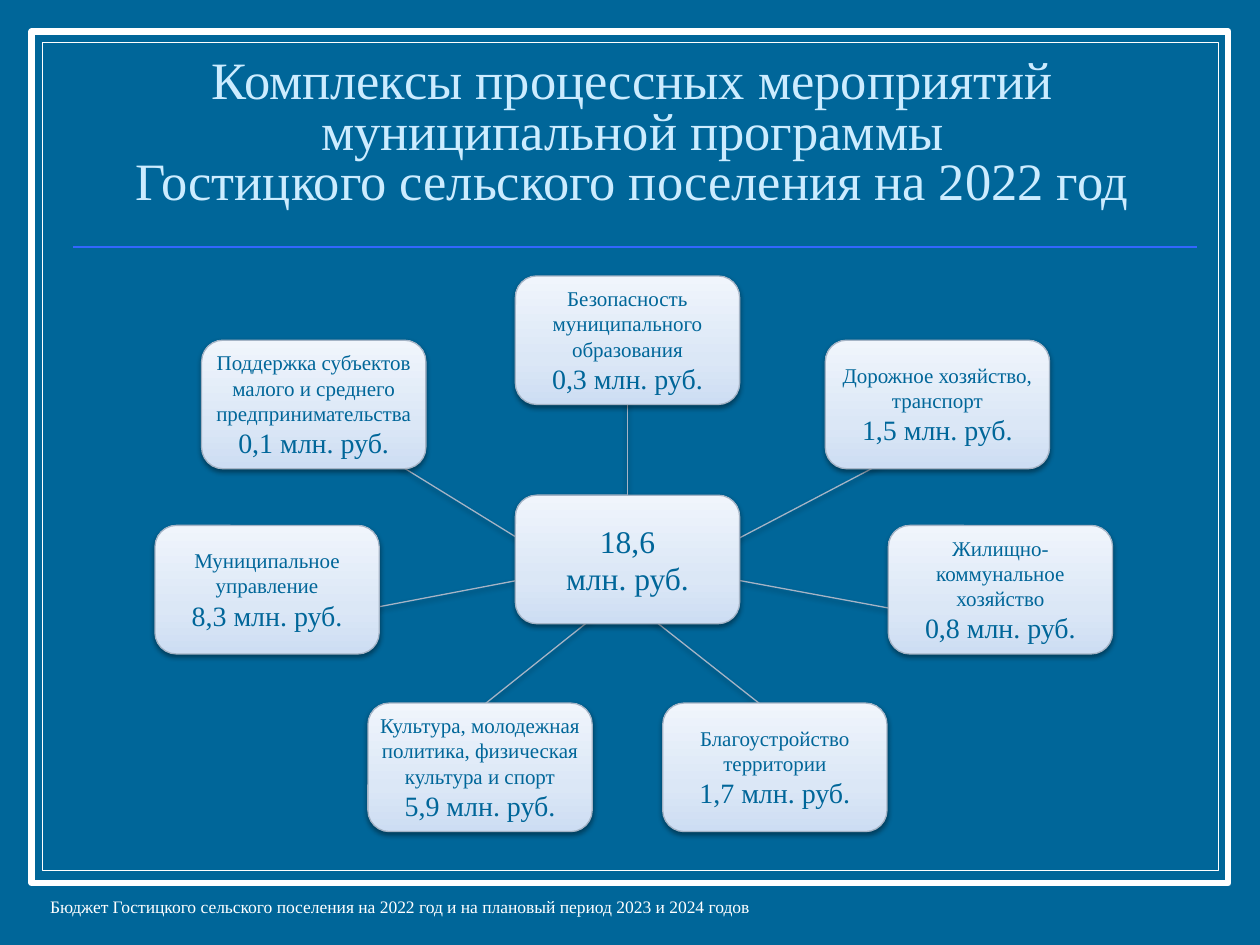
import pptx
import pptx.util
import pptx.dml.color
import pptx.enum.shapes
import pptx.enum.text
import pptx.oxml
import pptx.oxml.ns
from pptx.util import Inches

FONT = "Times New Roman"
BLUE, WHITE, EDGE = "006699", "FFFFFF", "A5B4C6"
BOX_WIDTH, BOX_HEIGHT = 1.78, 1.02
GRADIENT = [(0, "CDDDF3"), (35, "DBE7F6"), (100, "F0F5FC")]
CENTER = pptx.enum.text.PP_ALIGN.CENTER
ANCHOR = pptx.enum.text.MSO_ANCHOR
SHAPE = pptx.enum.shapes.MSO_SHAPE

# Box corner, spoke start, spoke end, paragraphs above the amount, amount
PROGRAMS = [
    ((1.6, 2.7), (4.14, 4.29), (3.07, 3.63),
     ["Поддержка субъектов малого и среднего предпринимательства"], "0,1"),
    ((1.23, 4.17), (4.14, 4.6), (2.46, 4.92),
     ["Муниципальное управление"], "8,3"),
    ((2.92, 5.58), (4.76, 4.86), (3.72, 5.69),
     ["Культура, молодежная\nполитика, физическая\nкультура и спорт"], "5,9"),
    ((5.26, 5.58), (5.11, 4.86), (6.15, 5.68),
     ["Благоустройство\nтерритории"], "1,7"),
    ((7.05, 4.17), (5.83, 4.6), (7.51, 4.91),
     ["Жилищно-\nкоммунальное", "хозяйство"], "0,8"),
    ((6.55, 2.7), (5.83, 4.29), (7.05, 3.65),
     ["Дорожное хозяйство,\nтранспорт"], "1,5"),
    ((4.09, 2.19), (4.98, 4.03), (4.98, 2.88),
     ["Безопасность\nмуниципального\nобразования"], "0,3"),
]


def rgb(value):
    return pptx.dml.color.RGBColor.from_string(value)


def xml(text):
    return pptx.oxml.parse_xml(text.replace(">", f" {pptx.oxml.ns.nsdecls('a')}>", 1))


def set_line(item, color, width):
    item.line.color.rgb = rgb(color)
    item.line.width = pptx.util.Pt(width)


def add_effects(item, shadow=True):
    content = (
        '<a:outerShdw blurRad="39370" dist="20320" dir="5400000" rotWithShape="0">'
        '<a:srgbClr val="000000"><a:alpha val="38000"/></a:srgbClr></a:outerShdw>'
    ) if shadow else ""
    item._element.spPr.append(xml(f"<a:effectLst>{content}</a:effectLst>"))


def add_text(frame, rows, color, align=None, spacing=None):
    """Write rows of (text, size), one paragraph each."""
    frame.word_wrap = True
    for index, (text, size) in enumerate(rows):
        para = frame.add_paragraph() if index else frame.paragraphs[0]
        para.text = text
        para.alignment = align
        para.line_spacing = spacing
        para.font.name = FONT
        para.font.size = pptx.util.Pt(size)
        para.font.color.rgb = rgb(color)


def add_label(page, area, text, size, color, **style):
    box = page.shapes.add_textbox(*map(Inches, area))
    box.text_frame.vertical_anchor = ANCHOR.BOTTOM
    add_text(box.text_frame, [(text, size)], color, **style)


def add_frame(page, area, width):
    frame = page.shapes.add_shape(SHAPE.RECTANGLE, *map(Inches, area))
    frame.shadow.inherit = False
    frame.fill.solid()
    frame.fill.fore_color.rgb = rgb(BLUE)
    set_line(frame, WHITE, width)


def add_line(page, start, end, color, width, shadow):
    line = page.shapes.add_connector(
        pptx.enum.shapes.MSO_CONNECTOR.STRAIGHT, *map(Inches, start + end))
    set_line(line, color, width)
    add_effects(line, shadow)


def add_box(page, corner, rows):
    area = (*corner, BOX_WIDTH, BOX_HEIGHT)
    box = page.shapes.add_shape(SHAPE.ROUNDED_RECTANGLE, *map(Inches, area))
    stops = "".join(
        f'<a:gs pos="{position * 1000}"><a:srgbClr val="{color}"/></a:gs>'
        for position, color in GRADIENT)
    box._element.spPr.append(xml(
        f'<a:gradFill><a:gsLst>{stops}</a:gsLst>'
        '<a:lin ang="16200000" scaled="0"/></a:gradFill>'))
    set_line(box, EDGE, 0.75)
    add_effects(box)
    frame = box.text_frame
    frame.margin_left = frame.margin_right = 0
    frame.margin_top = frame.margin_bottom = 0
    frame.vertical_anchor = ANCHOR.MIDDLE
    add_text(frame, rows, BLUE, CENTER)


def main():
    deck = pptx.Presentation()
    deck.slide_width, deck.slide_height = Inches(10), Inches(7.5)
    page = deck.slides.add_slide(deck.slide_layouts[6])
    page.background.fill.solid()
    page.background.fill.fore_color.rgb = rgb(BLUE)

    # Double frame and rule under the title
    add_frame(page, (0.25, 0.25, 9.5, 6.76), 3.5)
    add_frame(page, (0.34, 0.34, 9.33, 6.57), 0.75)
    add_line(page, (0.58, 1.96), (9.5, 1.96), "3366FF", 1, shadow=False)

    # Footer and title
    add_label(page, (0.3, 6.83, 9.39, 0.5),
              "Бюджет Гостицкого сельского поселения на 2022 год "
              "и на плановый период 2023 и 2024 годов", 10, WHITE)
    add_label(page, (0.56, 0.69, 8.92, 1.03),
              "Комплексы процессных мероприятий муниципальной программы\n"
              "Гостицкого сельского поселения на 2022 год",
              30, "CCECFF", align=CENTER, spacing=0.8)

    # Spokes lie behind the boxes
    for _, start, end, _, _ in PROGRAMS:
        add_line(page, start, end, EDGE, 0.75, shadow=True)

    # Total in the middle, programs around it
    add_box(page, (4.09, 3.93), [("18,6", 18), ("млн. руб.", 18)])
    for corner, _, _, names, amount in PROGRAMS:
        rows = [(name, 12) for name in names]
        add_box(page, corner, rows + [(f"{amount} млн. руб.", 16)])

    deck.save("out.pptx")


if __name__ == "__main__":
    main()
